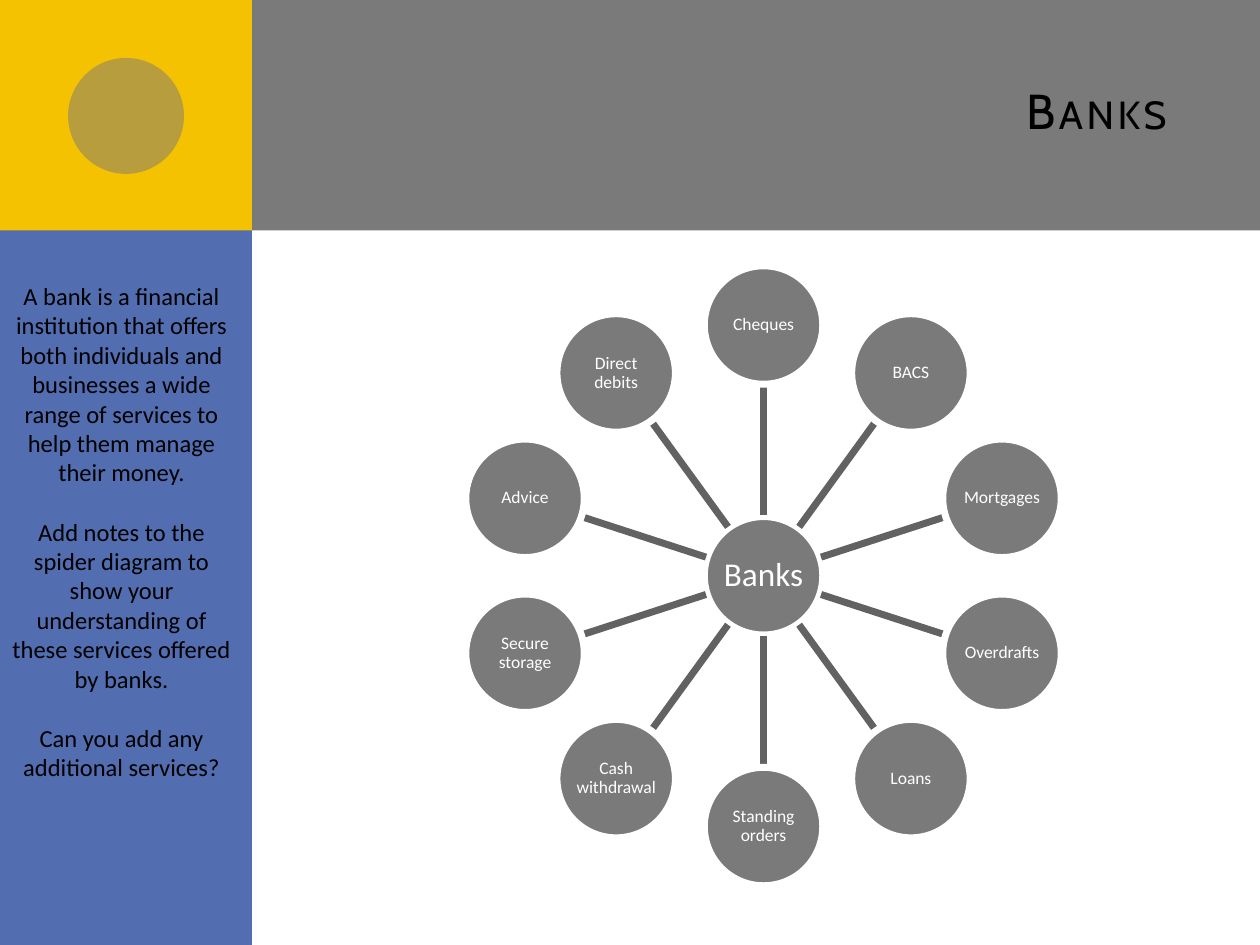
import dataclasses
import math

import pptx
import pptx.dml.color
import pptx.enum.shapes
import pptx.enum.text
import pptx.oxml
import pptx.oxml.ns
import pptx.util
from pptx.util import Inches

SHAPES = pptx.enum.shapes.MSO_SHAPE
ALIGN = pptx.enum.text.PP_ALIGN
ANCHOR = pptx.enum.text.MSO_ANCHOR


@dataclasses.dataclass(frozen=True)
class Theme:
    gray: str = "7A7A7A"
    spoke: str = "626262"
    blue: str = "526DB0"
    yellow: str = "F5C201"
    white: str = "FFFFFF"
    black: str = "000000"
    title_font: str = "Cabin"
    body_font: str = "Calibri"
    title_size: int = 28
    hub_size: int = 19
    sidebar_size: int = 14
    node_size: int = 10
    line_width: int = 4


THEME = Theme()

SIDEBAR_TEXTS = [
    "A bank is a financial institution that offers both individuals and "
    "businesses a wide range of services to help them manage their money.",
    "Add notes to the spider diagram to show your understanding of these "
    "services offered by banks.",
    "Can you add any additional services?",
]

# Clockwise from the top
SERVICES = ["Cheques", "BACS", "Mortgages", "Overdrafts", "Loans",
            "Standing orders", "Cash withdrawal", "Secure storage",
            "Advice", "Direct debits"]

# Spider diagram geometry, in inches
CENTER_X, CENTER_Y = 6.06, 4.57
ORBIT = 1.99
NODE_RADIUS = 0.47
SPOKE_START, SPOKE_END = 0.48, 1.52


def rgb(color):
    return pptx.dml.color.RGBColor.from_string(color)


def format_runs(paragraph, size, color, font=THEME.body_font):
    for run in paragraph.runs:
        run.font.size = pptx.util.Pt(size)
        run.font.name = font
        run.font.color.rgb = rgb(color)


def add_panel(slide, kind, left, top, width, height, color):
    shape = slide.shapes.add_shape(
        kind, Inches(left), Inches(top), Inches(width), Inches(height))
    shape.shadow.inherit = False
    shape.fill.solid()
    shape.fill.fore_color.rgb = rgb(color)
    shape.line.fill.background()
    return shape


def set_opacity(shape, percent):
    color = shape.element.spPr.find(".//" + pptx.oxml.ns.qn("a:srgbClr"))
    alpha = pptx.oxml.parse_xml(
        f'<a:alpha {pptx.oxml.ns.nsdecls("a")} val="{percent * 1000}"/>')
    color.append(alpha)


def add_title(slide, text):
    title = slide.shapes.title
    title.left, title.top = Inches(2.67), Inches(0.25)
    title.width, title.height = Inches(6.83), Inches(1.25)
    title.text_frame.text = text
    title.text_frame.vertical_anchor = ANCHOR.MIDDLE
    paragraph = title.text_frame.paragraphs[0]
    paragraph.alignment = ALIGN.RIGHT
    format_runs(paragraph, THEME.title_size, THEME.black, THEME.title_font)
    properties = title.element.find(".//" + pptx.oxml.ns.qn("a:rPr"))
    properties.set("cap", "small")
    properties.set("spc", "200")
    # Bring the title in front of the header band
    title.element.getparent().append(title.element)


def add_sidebar_text(slide, texts):
    box = slide.shapes.add_textbox(
        Inches(0), Inches(2.18), Inches(1.93), Inches(4.11))
    frame = box.text_frame
    frame.word_wrap = True
    for index, text in enumerate(texts):
        paragraph = frame.add_paragraph() if index else frame.paragraphs[0]
        paragraph.text = text
        paragraph.alignment = ALIGN.CENTER
        if index:
            paragraph.space_before = pptx.util.Pt(17)
        format_runs(paragraph, THEME.sidebar_size, THEME.black)


def add_node(slide, x, y, text, size):
    diameter = 2 * NODE_RADIUS
    node = add_panel(slide, SHAPES.OVAL, x - NODE_RADIUS, y - NODE_RADIUS,
                     diameter, diameter, THEME.gray)
    node.line.color.rgb = rgb(THEME.white)
    node.line.width = pptx.util.Pt(THEME.line_width)
    frame = node.text_frame
    frame.text = text
    frame.word_wrap = True
    frame.vertical_anchor = ANCHOR.MIDDLE
    frame.margin_left = frame.margin_right = Inches(0.01)
    frame.margin_top = frame.margin_bottom = Inches(0.01)
    paragraph = frame.paragraphs[0]
    paragraph.alignment = ALIGN.CENTER
    paragraph.line_spacing = 0.9
    format_runs(paragraph, size, THEME.white)


def point_at(angle, distance):
    return (CENTER_X + distance * math.sin(angle),
            CENTER_Y - distance * math.cos(angle))


def add_spoke(slide, angle):
    ends = point_at(angle, SPOKE_START) + point_at(angle, SPOKE_END)
    spoke = slide.shapes.add_connector(
        pptx.enum.shapes.MSO_CONNECTOR.STRAIGHT, *map(Inches, ends))
    spoke.line.color.rgb = rgb(THEME.spoke)
    spoke.line.width = pptx.util.Pt(THEME.line_width)
    spoke.element.spPr.append(pptx.oxml.parse_xml(
        f'<a:effectLst {pptx.oxml.ns.nsdecls("a")}/>'))


def add_spider_diagram(slide, hub, labels):
    add_node(slide, CENTER_X, CENTER_Y, hub, THEME.hub_size)
    for index, label in enumerate(labels):
        angle = 2 * math.pi * index / len(labels)
        add_spoke(slide, angle)
        add_node(slide, *point_at(angle, ORBIT), label, THEME.node_size)


def main():
    presentation = pptx.Presentation()
    presentation.slide_width = Inches(10)
    presentation.slide_height = Inches(7.5)
    slide = presentation.slides.add_slide(presentation.slide_layouts[5])

    # Header band, sidebar and corner ornament
    add_panel(slide, SHAPES.RECTANGLE, 0.5, 0, 9.5, 1.83, THEME.gray)
    add_panel(slide, SHAPES.RECTANGLE, 0, 0, 2, 7.5, THEME.blue)
    add_panel(slide, SHAPES.RECTANGLE, 0, 0, 2, 1.83, THEME.yellow)
    disc = add_panel(slide, SHAPES.OVAL, 0.54, 0.46, 0.92, 0.92, THEME.gray)
    set_opacity(disc, 50)

    # Content
    add_title(slide, "Banks")
    add_spider_diagram(slide, "Banks", SERVICES)
    add_sidebar_text(slide, SIDEBAR_TEXTS)

    presentation.save("out.pptx")


if __name__ == "__main__":
    main()
